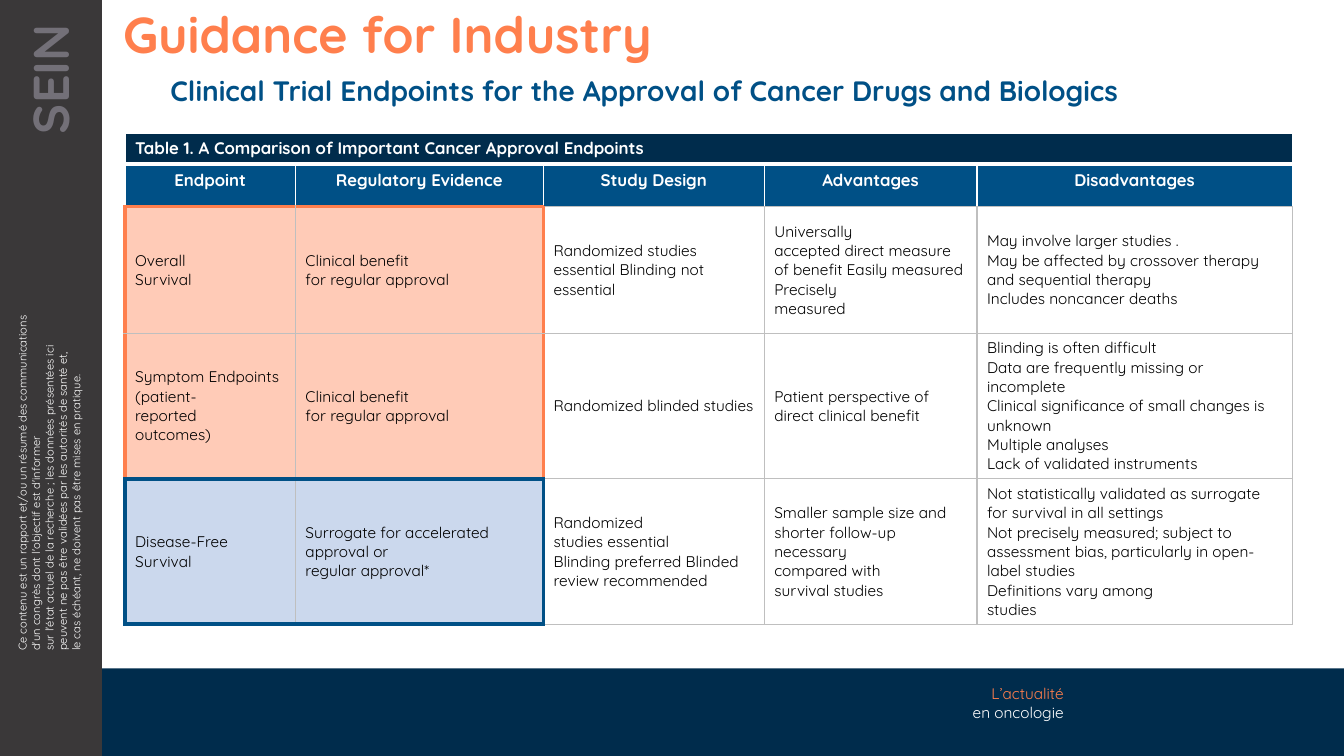
from lxml import etree
from pptx import Presentation
from pptx import util as u
from pptx.dml.color import RGBColor
from pptx.enum import shapes, text
from pptx.oxml.ns import qn

FONT = "Quicksand"
HUES = {
    "navy": "002C4C", "blue": "005086", "pale": "CBD8ED", "coral": "FF7F4D",
    "peach": "FFCBB7", "dark": "3A3839", "ash": "737078", "line": "BFBFBF",
    "white": "FFFFFF", "black": "000000",
}
LEFT, RIGHT, MID = (text.PP_ALIGN.LEFT, text.PP_ALIGN.RIGHT, text.PP_ALIGN.CENTER)
SIDES = ("L", "R", "T", "B")

COLS = (1.69, 2.46, 2.19, 2.11, 3.13)
ROWS = (0.27, 0.42, 1.26, 1.43, 1.43)
CAPTION = "Table 1. A Comparison of Important Cancer Approval Endpoints"
HEADS = ("Endpoint", "Regulatory Evidence", "Study Design", "Advantages", "Disadvantages")
BODY = (
    ("Overall\nSurvival",
     "Clinical benefit\nfor regular approval",
     "Randomized studies essential Blinding not essential",
     "Universally\naccepted direct measure of benefit Easily measured\nPrecisely\nmeasured",
     "May involve larger studies .\n"
     "May be affected by crossover therapy and sequential therapy\n"
     "Includes noncancer deaths"),
    ("Symptom Endpoints\n(patient-\nreported\noutcomes)",
     "Clinical benefit\nfor regular approval",
     "Randomized blinded studies",
     "Patient perspective of direct clinical benefit",
     "Blinding is often difficult\n"
     "Data are frequently missing or incomplete\n"
     "Clinical significance of small changes is unknown\n"
     "Multiple analyses\nLack of validated instruments"),
    ("Disease-Free Survival",
     "Surrogate for accelerated approval or\nregular approval*",
     "Randomized\nstudies essential\nBlinding preferred Blinded review recommended",
     "Smaller sample size and shorter follow-up necessary\ncompared with\nsurvival studies",
     "Not statistically validated as surrogate for survival in all settings\n"
     "Not precisely measured; subject to assessment bias, particularly in open-label studies\n"
     "Definitions vary among\nstudies"),
)
NOTICE = (
    "Ce contenu est un rapport et/ou un résumé des communications "
    "d'un congrès dont l'objectif est d'informer\v"
    "sur l'état actuel de la recherche ; les données présentées ici "
    "peuvent ne pas être validées par les autorités de santé et,\v"
    "le cas échéant, ne doivent pas être mises en pratique."
)


def tint(name):
    return RGBColor.from_string(HUES[name])


class Page:
    def __init__(self, deck):
        self.slide = deck.slides.add_slide(deck.slide_layouts[5])
        self.items = self.slide.shapes

    def style(self, frame, size, hue, bold=False, align=LEFT):
        for para in frame.paragraphs:
            para.alignment = align
            for run in para.runs:
                font = run.font
                font.name, font.size, font.bold = FONT, u.Pt(size), bold
                font.color.rgb = tint(hue)

    def place(self, item, box):
        item.left, item.top, item.width, item.height = map(u.Inches, box)

    def fill(self, frame, words, size, hue, bold, align, pads):
        frame.word_wrap = True
        frame.auto_size = text.MSO_AUTO_SIZE.NONE
        frame.vertical_anchor = text.MSO_ANCHOR.TOP
        frame.margin_left, frame.margin_right = map(u.Inches, pads)
        frame.margin_top = frame.margin_bottom = u.Inches(0.05)
        frame.text = words
        self.style(frame, size, hue, bold, align)

    def block(self, box, hue):
        item = self.items.add_shape(shapes.MSO_SHAPE.RECTANGLE, *map(u.Inches, box))
        item.shadow.inherit = False
        item.fill.solid()
        item.fill.fore_color.rgb = tint(hue)
        item.line.fill.background()

    def label(self, box, words, size, hue, bold=False, align=LEFT, pads=(0.1, 0.1), turn=0):
        item = self.items.add_textbox(*map(u.Inches, box))
        item.rotation = turn
        self.fill(item.text_frame, words, size, hue, bold, align, pads)
        return item.text_frame

    def title(self, box, words, size, hue):
        item = self.items.title
        self.place(item, box)
        self.fill(item.text_frame, words, size, hue, True, LEFT, (0.2, 0.1))
        return item.text_frame

    def border(self, cell, side, hue, width):
        props = cell._tc.get_or_add_tcPr()
        line = etree.SubElement(props, qn("a:ln" + side), w=str(u.Pt(width)))
        solid = etree.SubElement(line, qn("a:solidFill"))
        etree.SubElement(solid, qn("a:srgbClr"), val=HUES[hue])

    def cell(self, cell, words, back, size, hue, bold=False, align=LEFT, mid=False):
        cell.fill.solid()
        cell.fill.fore_color.rgb = tint(back)
        cell.vertical_anchor = text.MSO_ANCHOR.MIDDLE if mid else text.MSO_ANCHOR.TOP
        cell.text_frame.text = words
        self.style(cell.text_frame, size, hue, bold, align)

    def table(self, left, top):
        frame = self.items.add_table(len(ROWS), len(COLS), u.Inches(left), u.Inches(top),
                                     u.Inches(sum(COLS)), u.Inches(sum(ROWS)))
        grid = frame.table
        grid.first_row = grid.horz_banding = False
        for col, width in zip(grid.columns, COLS):
            col.width = u.Inches(width)
        for row, height in zip(grid.rows, ROWS):
            row.height = u.Inches(height)

        # Borders go before fills in the cell properties
        for (row, col, side), line in edges().items():
            self.border(grid.cell(row, col), side, *line)

        # Caption and column heads
        grid.cell(0, 0).merge(grid.cell(0, len(COLS) - 1))
        self.cell(grid.cell(0, 0), CAPTION, "navy", 12, "white", True)
        for col, head in enumerate(HEADS):
            self.cell(grid.cell(1, col), head, "blue", 12, "white", True, MID)

        # Endpoint rows, first two columns tinted
        for row, (back, line) in enumerate(zip(("peach", "peach", "pale"), BODY), 2):
            for col, words in enumerate(line):
                self.cell(grid.cell(row, col), words, back if col < 2 else "white",
                          11, "black", mid=True)


def edges():
    """Line colour and width for each side of each cell."""
    lines = {(row, col, side): ("white" if row < 2 else "line", 1)
             for row in range(len(ROWS)) for col in range(len(COLS)) for side in SIDES}
    for col in range(len(COLS)):
        lines[0, col, "B"] = lines[1, col, "T"] = ("white", 3)
        lines[1, col, "B"] = ("line", 1)
    # Thick outlines around the first two columns
    for first, last, hue in ((2, 3, "coral"), (4, 4, "blue")):
        pen = (hue, 3)
        for row in range(first, last + 1):
            lines[row, 0, "L"] = lines[row, 1, "R"] = lines[row, 2, "L"] = pen
        for col in (0, 1):
            lines[first - 1, col, "B"] = lines[first, col, "T"] = lines[last, col, "B"] = pen
    return lines


def main():
    deck = Presentation()
    deck.slide_width, deck.slide_height = u.Inches(13.33), u.Inches(7.5)
    page = Page(deck)

    # Footer band and side band
    page.block((1.01, 6.63, 12.32, 0.87), "navy")
    page.block((0, 0, 1.01, 7.5), "dark")
    page.label((-1.31, 4.37, 3.6, 0.77), NOTICE, 8, "white", turn=270)
    page.label((-1.04, 1.18, 3.07, 0.71), "SEIN", 36, "ash", True, RIGHT, (0.1, 0.24), 270)
    foot = page.label((9.01, 6.74, 1.64, 0.47), "L’actualité\ven oncologie", 11, "white",
                      align=RIGHT)
    foot.paragraphs[0].runs[0].font.color.rgb = tint("coral")

    # Title and subtitle
    head = page.title((1.02, 0.05, 12.31, 0.57), "Guidance for Industry", 36, "coral")
    sub = page.label((1.49, 0.72, 11.84, 0.37),
                     "Clinical Trial Endpoints for the Approval of Cancer Drugs and Biologics",
                     20, "blue", True, pads=(0.2, 0.1))
    for frame in (head, sub):
        frame.paragraphs[0].line_spacing = 0.9

    # Endpoint comparison
    page.table(1.24, 1.32)
    deck.save("out.pptx")


if __name__ == "__main__":
    main()
